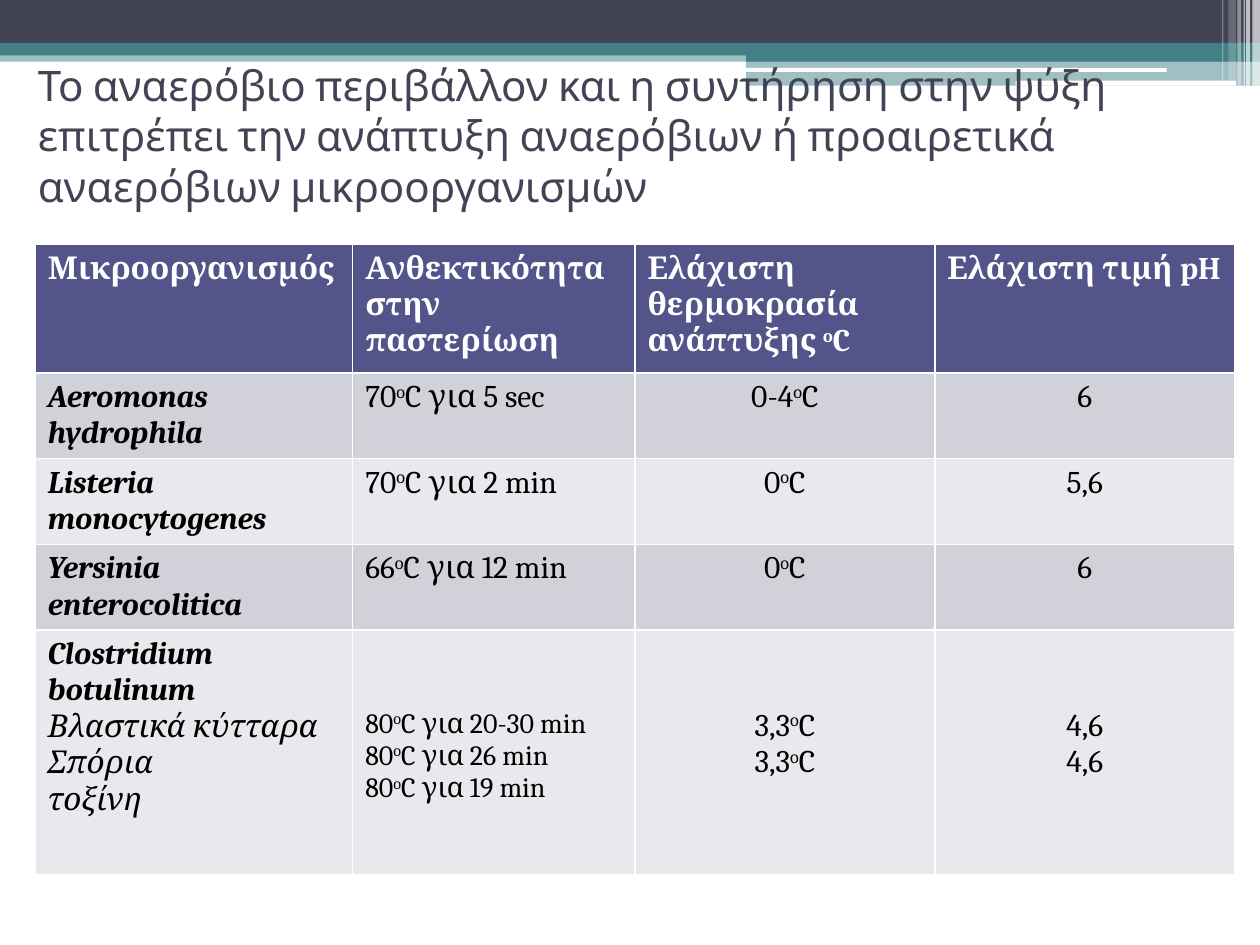
import pptx
import pptx.dml.color
import pptx.enum.shapes
import pptx.enum.text
import pptx.oxml
import pptx.oxml.ns
import pptx.util
from pptx.util import Inches

SHAPE = pptx.enum.shapes.MSO_SHAPE
ALIGN = pptx.enum.text.PP_ALIGN
NAVY, TEAL, WHITE, BLACK = "424456", "438086", "FFFFFF", "000000"
HEADER_FILL, BAND_FILLS = "53548A", ("D1D1DA", "E9E9ED")


def color(hex_value):
    return pptx.dml.color.RGBColor.from_string(hex_value)


def add_marked_runs(paragraph, text, size, font_color, bold=False, italic=False):
    """Add text run by run; the parts between ^ marks are superscript."""
    for index, part in enumerate(text.split("^")):
        run = paragraph.add_run()
        run.text = part
        run.font.name = "Cambria"
        run.font.size = pptx.util.Pt(size)
        run.font.bold = bold
        run.font.italic = italic
        run.font.color.rgb = color(font_color)
        if index % 2:
            run.font._element.set("baseline", "30000")


deck = pptx.Presentation()
deck.slide_width, deck.slide_height = Inches(10), Inches(7.5)
slide = deck.slides.add_slide(deck.slide_layouts[5])

# Bands across the top: left, top, width, height, fill, opacity in percent
bands = [
    (SHAPE.RECTANGLE, 0, 0.4, 10, 0.09, TEAL, 50),
    (SHAPE.RECTANGLE, 0, 0, 10, 0.34, NAVY, 100),
    (SHAPE.RECTANGLE, 0, 0.34, 10, 0.1, TEAL, 100),
    (SHAPE.RECTANGLE, 5.92, 0.39, 4.08, 0.1, TEAL, 100),
    (SHAPE.RECTANGLE, 5.92, 0.48, 4.08, 0.2, TEAL, 50),
    (SHAPE.ROUNDED_RECTANGLE, 5.91, 0.54, 3.35, 0.03, WHITE, 100),
    (SHAPE.ROUNDED_RECTANGLE, 8.06, 0.64, 1.75, 0.04, WHITE, 100),
]
stripes = [
    (9.94, 0.06, 0.68, 65), (9.89, 0.03, 0.68, 65), (9.87, 0.01, 0.68, 60),
    (9.82, 0.03, 0.68, 40), (9.75, 0.06, 0.64, 20), (9.7, 0.01, 0.64, 30),
]
bands += [(SHAPE.RECTANGLE, left, 0, width, height, WHITE, opacity)
          for left, width, height, opacity in stripes]
for preset, left, top, width, height, fill, opacity in bands:
    band = slide.shapes.add_shape(
        preset, Inches(left), Inches(top), Inches(width), Inches(height))
    band.shadow.inherit = False
    band.line.fill.background()
    band.fill.solid()
    band.fill.fore_color.rgb = color(fill)
    if opacity < 100:
        srgb = band.element.spPr.find(".//" + pptx.oxml.ns.qn("a:srgbClr"))
        alpha = pptx.oxml.parse_xml(
            f'<a:alpha {pptx.oxml.ns.nsdecls("a")} val="{opacity * 1000}"/>')
        srgb.append(alpha)

# The title stands in front of the bands
title = slide.shapes.title
slide.shapes.element.append(title.element)
title.left, title.top = Inches(0.2), Inches(0.52)
title.width, title.height = Inches(9.8), Inches(1.1)
title.text_frame.word_wrap = True
title.text_frame.auto_size = pptx.enum.text.MSO_AUTO_SIZE.NONE
title.text_frame.vertical_anchor = pptx.enum.text.MSO_ANCHOR.MIDDLE
heading = title.text_frame.paragraphs[0]
heading.alignment = ALIGN.LEFT
heading_run = heading.add_run()
heading_run.text = (
    "Το αναερόβιο περιβάλλον και η συντήρηση στην ψύξη επιτρέπει την ανάπτυξη "
    "αναερόβιων ή προαιρετικά αναερόβιων μικροοργανισμών")
heading_run.font.name = "Cabin"
heading_run.font.size = pptx.util.Pt(24)
heading_run.font.color.rgb = color(NAVY)

# Each cell is a list of lines
rows = [
    [["Μικροοργανισμός"], ["Ανθεκτικότητα στην παστερίωση"],
     ["Ελάχιστη θερμοκρασία ανάπτυξης ^o^C"], ["Ελάχιστη τιμή pH"]],
    [["Aeromonas hydrophila"], ["70^o^C για 5 sec"], ["0-4^o^C"], ["6"]],
    [["Listeria monocytogenes"], ["70^o^C για 2 min"], ["0^o^C"], ["5,6"]],
    [["Yersinia enterocolitica"], ["66^o^C για 12 min"], ["0^o^C"], ["6"]],
    [["Clostridium botulinum", "Βλαστικά κύτταρα", "Σπόρια", "τοξίνη"],
     ["80^o^C για 20-30 min", "80^o^C για 26 min", "80^o^C για 19 min"],
     ["3,3^o^C", "3,3^o^C"], ["4,6", "4,6"]],
]
column_widths = [2.52, 2.24, 2.38, 2.38]
row_heights = [1.02, 0.68, 0.68, 0.68, 1.94]
microbes = slide.shapes.add_table(
    len(rows), len(column_widths), Inches(0.28), Inches(1.94),
    Inches(sum(column_widths)), Inches(sum(row_heights))).table
for column, width in zip(microbes.columns, column_widths):
    column.width = Inches(width)
for row, height in zip(microbes.rows, row_heights):
    row.height = Inches(height)

last_row = len(rows) - 1
for r, row in enumerate(rows):
    for c, lines in enumerate(row):
        cell = microbes.cell(r, c)
        cell.fill.solid()
        cell.fill.fore_color.rgb = color(BAND_FILLS[(r - 1) % 2] if r else HEADER_FILL)
        if r == last_row and c:
            # Values start beside the third line of the first column
            cell.margin_top = Inches(0.62)
        for i, line in enumerate(lines):
            frame = cell.text_frame
            paragraph = frame.add_paragraph() if i else frame.paragraphs[0]
            paragraph.alignment = ALIGN.CENTER if r and c > 1 else ALIGN.LEFT
            add_marked_runs(
                paragraph, line,
                size=16 if r == last_row and c == 1 else 18,
                font_color=BLACK if r else WHITE,
                bold=r == 0 or (c == 0 and i == 0),
                italic=r > 0 and c == 0)

deck.save("out.pptx")
